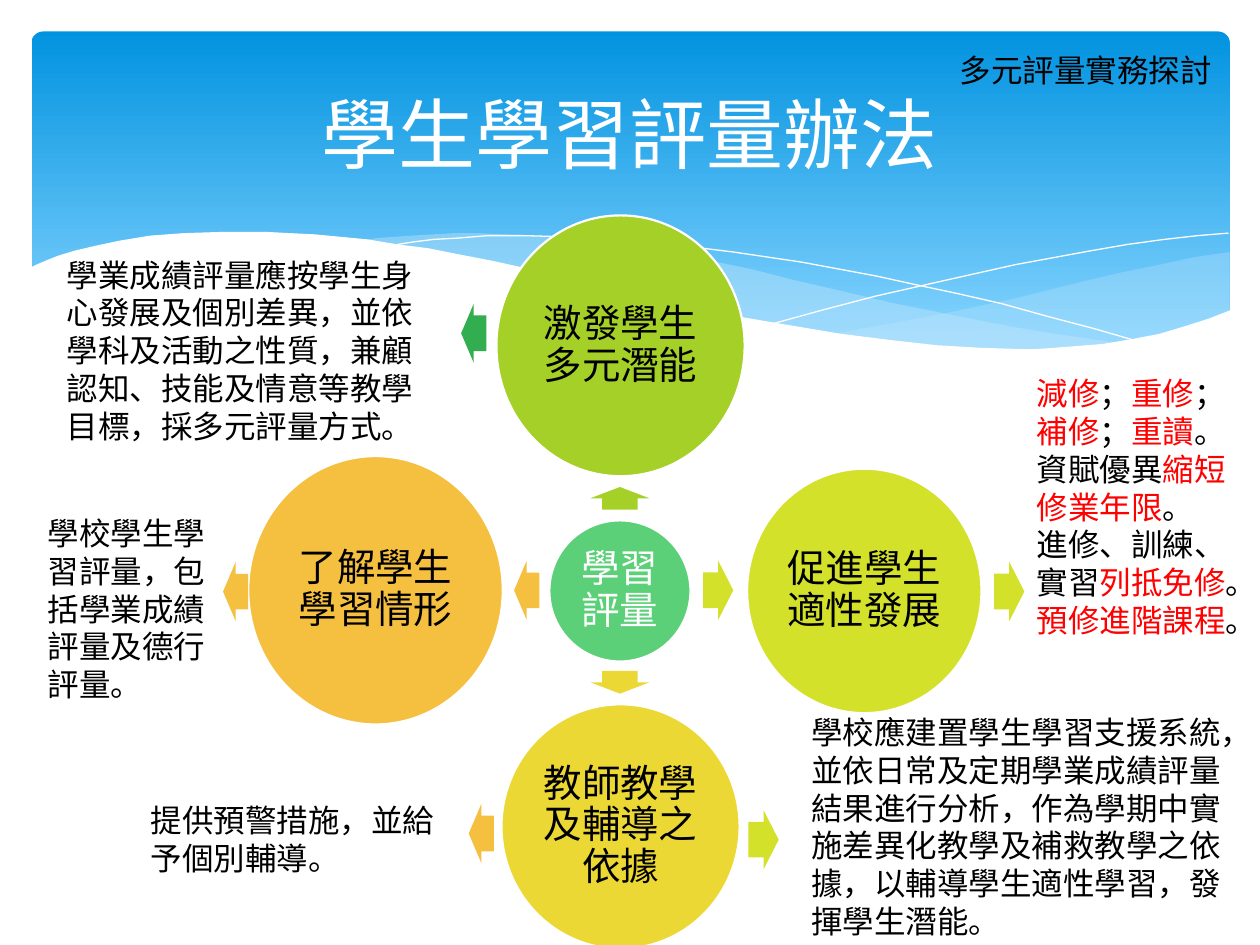
from lxml.etree import SubElement
from pptx import Presentation
from pptx.dml.color import RGBColor
from pptx.enum.shapes import MSO_SHAPE as Shape
from pptx.enum.text import MSO_ANCHOR as Anchor, MSO_AUTO_SIZE as AutoSize, PP_ALIGN as Align
from pptx.oxml.ns import qn
from pptx.util import Pt

PX = 9144  # 100 px to the inch
FONT = "Calibri"
WHITE = RGBColor(0xFF, 0xFF, 0xFF)
BLACK = RGBColor(0x00, 0x00, 0x00)
RED = RGBColor(0xFF, 0x00, 0x00)
SKY_TOP = RGBColor(0x02, 0x93, 0xE0)
SKY_BOTTOM = RGBColor(0x83, 0xD3, 0xFE)
MIST = RGBColor(0xC6, 0xE7, 0xFC)
MINT = RGBColor(0x5B, 0xD0, 0x78)
GREEN = RGBColor(0x32, 0xAE, 0x51)
LEAF = RGBColor(0xA5, 0xD0, 0x28)
LIME = RGBColor(0xD4, 0xE1, 0x2B)
YELLOW = RGBColor(0xEC, 0xD8, 0x35)
ORANGE = RGBColor(0xF5, 0xC0, 0x40)

deck = Presentation()
deck.slide_width, deck.slide_height = 1000 * PX, 750 * PX
page = deck.slides.add_slide(deck.slide_layouts[6])


def add_wave(points, fill=None, opacity=100):
    """Draw a filled wave, or a thin white line when there is no fill."""
    builder = page.shapes.build_freeform(*points[0], scale=PX)
    builder.add_line_segments(points[1:], close=fill is not None)
    wave = builder.convert_to_shape()
    wave.shadow.inherit = False
    if fill is None:
        wave.fill.background()
        wave.line.color.rgb = WHITE
        wave.line.width = Pt(0)
        return
    wave.line.fill.background()
    wave.fill.solid()
    wave.fill.fore_color.rgb = fill
    if opacity < 100:
        color = wave.fill._xPr.find(qn("a:solidFill"))[0]
        SubElement(color, qn("a:alpha")).set("val", str(opacity * 1000))


def write(shape, lines, size, color=BLACK, align=Align.LEFT):
    """Fill a shape with paragraphs; "|" switches between red and black."""
    frame = shape.text_frame
    frame.word_wrap = True
    for index, line in enumerate(lines):
        para = frame.paragraphs[0] if index == 0 else frame.add_paragraph()
        para.alignment = align
        para.font.name = FONT
        para.font.size = Pt(size)
        parts = line.split("|")
        if len(parts) == 1:
            para.font.color.rgb = color
        for turn, part in enumerate(parts):
            if part:
                span = para.add_run()
                span.text = part
                if len(parts) > 1:
                    span.font.color.rgb = BLACK if turn % 2 else RED
    return frame


# Sky banner
sky = page.shapes.add_shape(Shape.ROUNDED_RECTANGLE, 25 * PX, 25 * PX, 951 * PX, 270 * PX)
sky.adjustments[0] = 0.034
sky.shadow.inherit = False
sky.line.fill.background()
sky.fill.gradient()
sky.fill.gradient_angle = 270
for stop, position, color in zip(sky.fill.gradient_stops, (0, 0.9), (SKY_TOP, SKY_BOTTOM)):
    stop.position = position
    stop.color.rgb = color

# Waves, from back to front
add_wave([(976, 200), (948, 204), (921, 210), (891, 216), (861, 223), (805, 237),
          (753, 248), (706, 257), (661, 265), (691, 269), (719, 272), (745, 275),
          (769, 277), (803, 278), (835, 277), (863, 275), (889, 272), (913, 267),
          (935, 262), (949, 257), (963, 252), (976, 247)], MIST, 29)
add_wave([(893, 273), (866, 269), (837, 265), (807, 260), (775, 254), (741, 247),
          (706, 240), (668, 231), (629, 222), (598, 214), (569, 208), (541, 203),
          (514, 198), (489, 194), (465, 191), (442, 189), (420, 187), (399, 186),
          (380, 185), (361, 185), (328, 187), (299, 189), (286, 191), (323, 196),
          (362, 203), (404, 211), (449, 222), (491, 232), (530, 240), (566, 248),
          (601, 255), (634, 261), (665, 266), (695, 270), (722, 274), (748, 276),
          (773, 277), (796, 278), (828, 278), (857, 277), (876, 275)], MIST, 40)
add_wave([(309, 195), (328, 192), (344, 190), (363, 189), (387, 187), (416, 187),
          (450, 188), (489, 190), (533, 194), (582, 200), (636, 208), (695, 219),
          (727, 226), (760, 233), (795, 241), (831, 251), (869, 261), (907, 272)])
add_wave([(613, 257), (653, 246), (695, 235), (748, 223), (806, 210), (866, 199),
          (895, 194), (924, 190), (951, 187), (975, 185)])
add_wave([(977, 246), (959, 253), (940, 259), (920, 265), (899, 269), (875, 273),
          (850, 275), (823, 277), (809, 277), (778, 276), (744, 274), (708, 270),
          (668, 265), (626, 258), (579, 250), (529, 239), (475, 227), (418, 213),
          (391, 207), (365, 202), (340, 197), (316, 194), (292, 190), (271, 188),
          (250, 186), (230, 185), (211, 184), (177, 184), (146, 185), (119, 187),
          (95, 191), (76, 195), (59, 199), (46, 203), (36, 207), (29, 210),
          (23, 213), (23, 329), (977, 329)], WHITE)

# Title
title = page.shapes.add_textbox(50 * PX, 37 * PX, 900 * PX, 137 * PX)
write(title, ["學生學習評量辦法"], 44, WHITE, Align.CENTER).vertical_anchor = Anchor.MIDDLE

# Centre circle and the four aims around it
circles = [
    ("學習評量", 436, 413, 112, 112, MINT, WHITE),
    ("激發學生多元潛能", 394, 171, 197, 207, LEAF, BLACK),
    ("促進學生適性發展", 593, 372, 186, 194, LIME, BLACK),
    ("教師教學及輔導之依據", 398, 559, 189, 194, YELLOW, BLACK),
    ("了解學生學習情形", 197, 362, 202, 213, ORANGE, BLACK),
]
for text, left, top, width, height, fill, color in circles:
    circle = page.shapes.add_shape(Shape.OVAL, left * PX, top * PX, width * PX, height * PX)
    circle.shadow.inherit = False
    circle.fill.solid()
    circle.fill.fore_color.rgb = fill
    circle.line.color.rgb = WHITE
    circle.line.width = Pt(1.25)
    frame = write(circle, [text], 22, color, Align.CENTER)
    frame.vertical_anchor = Anchor.MIDDLE
    frame.margin_left = frame.margin_right = frame.margin_top = frame.margin_bottom = 3 * PX
    frame.paragraphs[0].line_spacing = 0.9

# Arrows: left, top, length, rotation, colour
arrows = [
    (483, 372, 18, 270, LEAF),
    (558, 445, 24, 0, LIME),
    (483, 518, 18, 90, YELLOW),
    (408, 445, 20, 180, ORANGE),
    (177, 446, 20, 180, ORANGE),
    (366, 241, 20, 180, GREEN),
    (594, 643, 24, 0, LIME),
    (789, 446, 24, 0, LIME),
    (372, 638, 20, 180, ORANGE),
]
for left, top, length, rotation, color in arrows:
    arrow = page.shapes.add_shape(Shape.RIGHT_ARROW, left * PX, top * PX, length * PX, 47 * PX)
    arrow.adjustments[0] = 0.6
    arrow.adjustments[1] = 0.5
    arrow.rotation = rotation
    arrow.shadow.inherit = False
    arrow.fill.solid()
    arrow.fill.fore_color.rgb = color
    arrow.line.fill.background()

# Notes beside the circles
notes = [
    (28, 403, 150, 162, ["學校學生學習評量，包括學業成績評量及德行評量。"]),
    (43, 198, 315, 162, ["學業成績評量應按學生身心發展及個別差異，並依學科及活動之性質，"
                         "兼顧認知、技能及情意等教學目標，採多元評量方式。"]),
    (634, 561, 354, 192, ["學校應建置學生學習支援系統，並依日常及定期學業成績評量結果進行分析，"
                          "作為學期中實施差異化教學及補救教學之依據，以輔導學生適性學習，"
                          "發揮學生潛能。"]),
    (813, 292, 177, 222, ["減修|；|重修|；|補修|；|重讀|。", "|資賦優異|縮短修業年限|。",
                          "|進修、訓練、實習|列抵免修|。", "預修進階課程|。"]),
    (110, 631, 256, 71, ["提供預警措施，並給予個別輔導。"]),
]
for left, top, width, height, lines in notes:
    note = page.shapes.add_textbox(left * PX, top * PX, width * PX, height * PX)
    write(note, lines, 18).auto_size = AutoSize.SHAPE_TO_FIT_TEXT

# Topic in the corner
topic = page.shapes.add_textbox(752 * PX, 36 * PX, 222 * PX, 40 * PX)
frame = write(topic, ["多元評量實務探討"], 18)
frame.word_wrap = False
frame.auto_size = AutoSize.SHAPE_TO_FIT_TEXT

deck.save("out.pptx")
